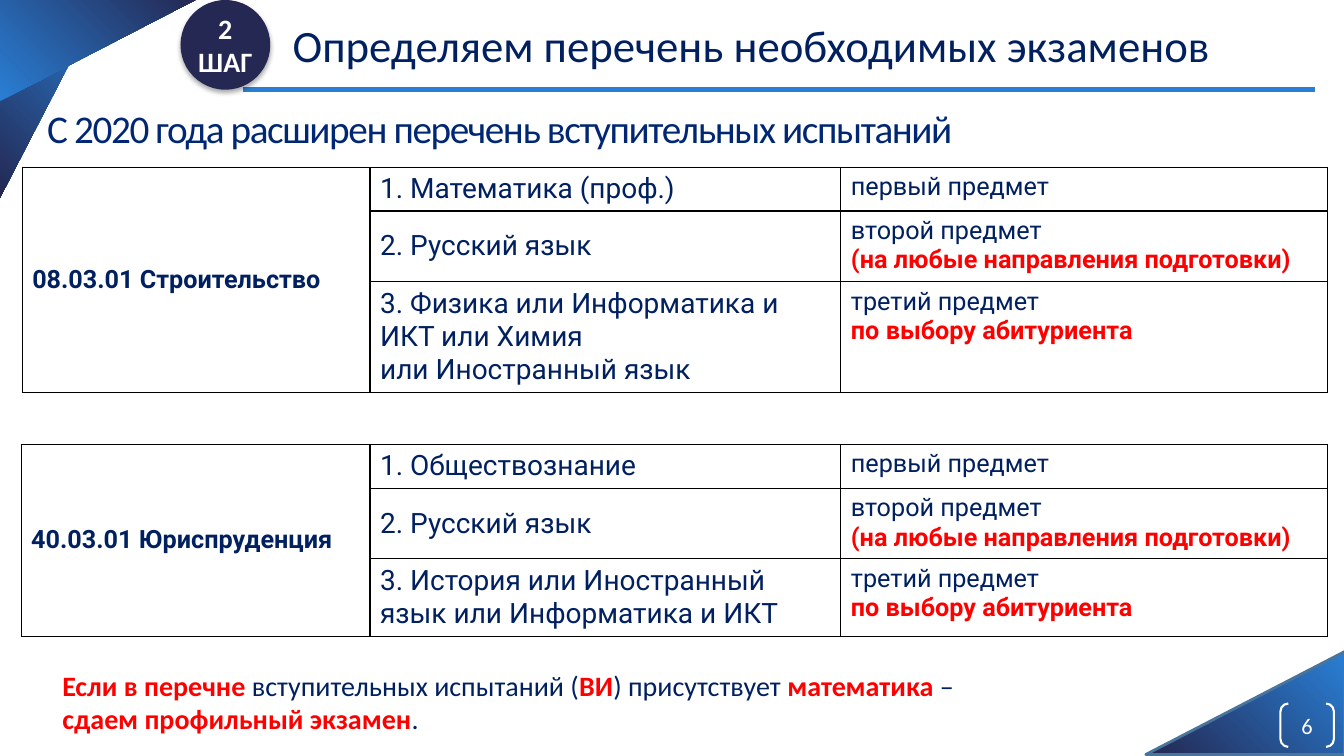
"""Build the slide about the list of required entrance exams."""
from lxml import etree
from pptx import Presentation
from pptx.dml.color import RGBColor
from pptx.enum import shapes, text
from pptx.oxml import parse_xml
from pptx.util import Inches, Pt

COLORS = {"blue": "297FD5", "dark": "242852", "edge": "49749B", "navy": "002060",
          "heading": "002774", "red": "FF0000", "white": "FFFFFF", "black": "000000"}
NS = "http://schemas.openxmlformats.org/drawingml/2006/main"
MIDDLE, TOP = text.MSO_ANCHOR.MIDDLE, text.MSO_ANCHOR.TOP
CENTER, LEFT = text.PP_ALIGN.CENTER, text.PP_ALIGN.LEFT


def rgb(name):
    return RGBColor.from_string(COLORS[name])


def write(tf, content, size=18, font="Calibri", color="navy", bold=False,
          align=LEFT, anchor=TOP, margin=None, spacing=None):
    """Write a string or a list of (text, color, bold) parts in one paragraph."""
    tf.word_wrap = True
    tf.vertical_anchor = anchor
    if margin is not None:
        tf.margin_left = tf.margin_right = tf.margin_top = tf.margin_bottom = Inches(margin)
    p = tf.paragraphs[0]
    p.alignment = align
    parts = [(content, color, bold)] if isinstance(content, str) else content
    for words, part_color, part_bold in parts:
        for i, line in enumerate(words.split("\n")):
            if i:
                p.add_line_break()
            if not line:
                continue
            r = p.add_run()
            r.text = line
            r.font.size = Pt(size)
            r.font.name = font
            r.font.bold = part_bold
            r.font.color.rgb = rgb(part_color)
            if spacing:
                r.font._element.set("spc", str(spacing * 100))
    for br in p._p.findall(f"{{{NS}}}br"):
        etree.SubElement(br, f"{{{NS}}}rPr", sz=str(size * 100))


prs = Presentation()
prs.slide_width, prs.slide_height = Inches(13.33), Inches(7.5)
s = prs.slides.add_slide(prs.slide_layouts[5])

corners = [(11.84, 5.99, 270, False, True), (0, -0.01, 180, True, False),
           (0.47, -0.49, 90, False, False)]
for x, y, rotation, flipped, outlined in corners:
    sp = s.shapes.add_shape(shapes.MSO_SHAPE.RIGHT_TRIANGLE,
                            Inches(x), Inches(y), Inches(1.02), Inches(1.97))
    sp.shadow.inherit = False
    sp.rotation = rotation
    if flipped:
        sp._element.spPr.xfrm.set("flipH", "1")
    sp.fill.gradient()
    sp.fill.gradient_angle = 135
    for stop, name in zip(sp.fill.gradient_stops, ("blue", "dark")):
        stop.color.rgb = rgb(name)
    if outlined:
        sp.line.color.rgb = rgb("edge")
        sp.line.width = Pt(2)
    else:
        sp.line.fill.background()

rule = s.shapes.add_connector(shapes.MSO_CONNECTOR.STRAIGHT,
                              Inches(13.04), Inches(0.89), Inches(2.41), Inches(0.89))
rule.line.color.rgb = rgb("blue")
rule.line.width = Pt(3.75)
etree.SubElement(rule._element.spPr, f"{{{NS}}}effectLst")

number = s.shapes.add_shape(shapes.MSO_SHAPE.DOUBLE_BRACKET,
                            Inches(12.7), Inches(6.98), Inches(0.53), Inches(0.43))
number.shadow.inherit = False
number.adjustments[0] = 0.18
number.fill.background()
number.line.color.rgb = rgb("white")
number.line.width = Pt(1.5)
write(number.text_frame, "6", size=16, color="white", align=CENTER, anchor=MIDDLE, margin=0)

title = s.shapes.title
title.left, title.top = Inches(2.61), Inches(0.13)
title.width, title.height = Inches(9.69), Inches(0.64)
title.text_frame.auto_size = text.MSO_AUTO_SIZE.NONE
write(title.text_frame, "Определяем перечень необходимых экзаменов", size=32, align=CENTER)

heading = s.shapes.add_textbox(Inches(0.37), Inches(0.99), Inches(12.6), Inches(0.6))
write(heading.text_frame, "С 2020 года расширен перечень вступительных испытаний",
      size=28, color="heading", spacing=-1)

notes = [
    "первый предмет",
    [("второй предмет\n", "navy", False), ("(на любые направления подготовки)", "red", True)],
    [("третий предмет \n", "navy", False), ("по выбору абитуриента", "red", True)],
]
programs = [
    (0.22, 1.66, 3.45, "08.03.01 Строительство", [0.43, 0.69, 1.07],
     ["1. Математика (проф.)", "2. Русский язык",
      "3. Физика или Информатика и ИКТ или Химия \nили Иностранный язык"]),
    (0.21, 4.41, 3.46, "40.03.01 Юриспруденция", [0.43, 0.69, 0.75],
     ["1. Обществознание", "2. Русский язык",
      "3. История или Иностранный язык или Информатика и ИКТ"]),
]
for x, y, first_width, program, heights, exams in programs:
    widths = [first_width, 4.67, 4.83]
    frame = s.shapes.add_table(3, 3, Inches(x), Inches(y),
                               Inches(sum(widths)), Inches(sum(heights)))
    table = frame.table
    table.first_row = table.horz_banding = False
    for column, width in zip(table.columns, widths):
        column.width = Inches(width)
    for row, height in zip(table.rows, heights):
        row.height = Inches(height)
    for cell in table.iter_cells():
        tcPr = cell._tc.get_or_add_tcPr()
        for side in ("lnL", "lnR", "lnT", "lnB"):
            tcPr.append(parse_xml(
                f'<a:{side} xmlns:a="{NS}" w="12700"><a:solidFill>'
                f'<a:srgbClr val="{COLORS["black"]}"/></a:solidFill></a:{side}>'))
        cell.fill.background()
    table.cell(0, 0).merge(table.cell(2, 0))
    name_cell = table.cell(0, 0)
    name_cell.vertical_anchor = MIDDLE
    write(name_cell.text_frame, program, font="Roboto", bold=True, anchor=MIDDLE)
    for i, (exam, note) in enumerate(zip(exams, notes)):
        table.cell(i, 1).vertical_anchor = MIDDLE
        write(table.cell(i, 1).text_frame, exam, size=20, font="Roboto", anchor=MIDDLE)
        write(table.cell(i, 2).text_frame, note, font="Roboto")

advice = s.shapes.add_textbox(Inches(0.52), Inches(6.58), Inches(12.05), Inches(0.77))
write(advice.text_frame, [
    ("Если в перечне ", "red", True), ("вступительных испытаний (", "navy", False),
    ("ВИ", "red", True), (") присутствует ", "navy", False),
    ("математика ", "red", True), ("– \n", "navy", False),
    ("сдаем профильный экзамен", "red", True), (".", "navy", False)], size=20)

step = s.shapes.add_shape(shapes.MSO_SHAPE.OVAL,
                          Inches(1.79), Inches(0), Inches(0.89), Inches(0.89))
step.fill.solid()
step.fill.fore_color.rgb = rgb("dark")
step.line.fill.background()
step._element.spPr.append(parse_xml(
    f'<a:effectLst xmlns:a="{NS}"><a:outerShdw blurRad="44450" dist="27940" dir="5400000">'
    f'<a:srgbClr val="{COLORS["black"]}"><a:alpha val="32000"/></a:srgbClr>'
    '</a:outerShdw></a:effectLst>'))
write(step.text_frame, "2\nШАГ", size=20, color="white", bold=True,
      align=CENTER, anchor=MIDDLE, margin=0)

prs.save("out.pptx")
